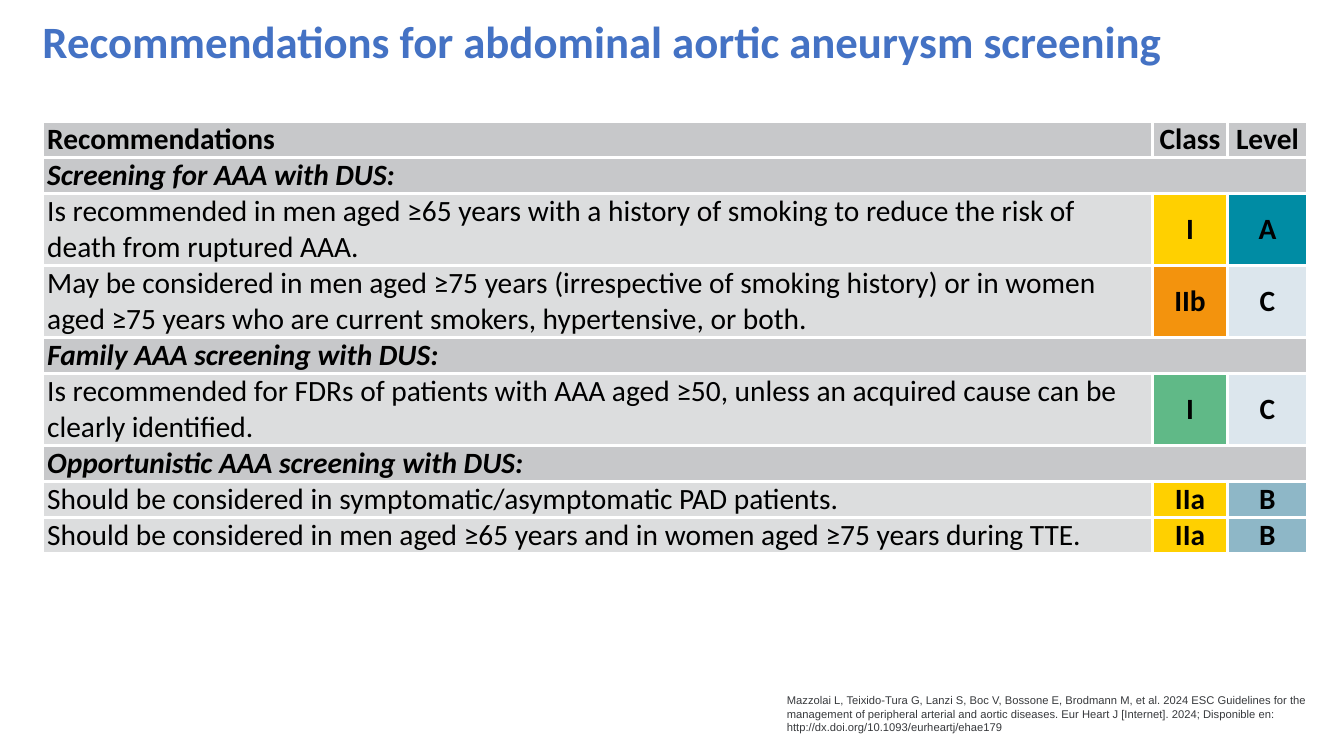
from dataclasses import dataclass

from lxml import etree
from pptx import Presentation
from pptx.dml.color import RGBColor
from pptx.enum import text as t
from pptx.oxml.ns import qn
from pptx.util import Cm, Pt


@dataclass(frozen=True)
class Theme:
    font: str = "Calibri"
    citation_font: str = "Arial"
    title_size: float = 32
    table_size: float = 21
    citation_size: float = 8
    title: str = "4472C4"
    ink: str = "000000"
    citation: str = "37393C"
    white: str = "FFFFFF"
    heading: str = "C7C8CA"
    body: str = "DCDDDE"
    yellow: str = "FFD000"
    orange: str = "F3930D"
    green: str = "60B987"
    level_a: str = "008CA4"
    level_b: str = "8EB7C7"
    level_c: str = "DCE6ED"


THEME = Theme()
LEVEL_FILLS = {"A": THEME.level_a, "B": THEME.level_b, "C": THEME.level_c}


@dataclass(frozen=True)
class Section:
    text: str


@dataclass(frozen=True)
class Recommendation:
    text: str
    grade: str
    grade_fill: str
    level: str
    lines: int = 1


ROWS = [
    Section("Screening for AAA with DUS:"),
    Recommendation(
        "Is recommended in men aged ≥65 years with a history of smoking "
        "to reduce the risk of death from ruptured AAA.",
        "I", THEME.yellow, "A", 2),
    Recommendation(
        "May be considered in men aged ≥75 years (irrespective of smoking history) "
        "or in women aged ≥75 years who are current smokers, hypertensive, or both.",
        "IIb", THEME.orange, "C", 2),
    Section("Family AAA screening with DUS:"),
    Recommendation(
        "Is recommended for FDRs of patients with AAA aged ≥50, "
        "unless an acquired cause can be clearly identified.",
        "I", THEME.green, "C", 2),
    Section("Opportunistic AAA screening with DUS:"),
    Recommendation(
        "Should be considered in symptomatic/asymptomatic PAD patients.",
        "IIa", THEME.yellow, "B"),
    Recommendation(
        "Should be considered in men aged ≥65 years and in women aged ≥75 years during TTE.",
        "IIa", THEME.yellow, "B"),
]
HEADERS = ["Recommendations", "Class", "Level"]
COLUMN_WIDTHS = [27.98, 1.88, 2.02]
LINE_HEIGHT = 0.9
CITATION = (
    "Mazzolai L, Teixido-Tura G, Lanzi S, Boc V, Bossone E, Brodmann M, et al. "
    "2024 ESC Guidelines for the management of peripheral arterial and aortic diseases. "
    "Eur Heart J [Internet]. 2024; Disponible en: "
    "http://dx.doi.org/10.1093/eurheartj/ehae179"
)


def apply_format(target, values: dict) -> None:
    for name, value in values.items():
        setattr(target, name, value)


def format_font(font, color: str, values: dict) -> None:
    apply_format(font, values)
    font.color.rgb = RGBColor.from_string(color)


def add_borders(cell) -> None:
    properties = cell._tc.get_or_add_tcPr()
    for side in ("lnL", "lnR", "lnT", "lnB"):
        line = etree.SubElement(properties, qn(f"a:{side}"), w=str(Pt(2.25)))
        fill = etree.SubElement(line, qn("a:solidFill"))
        etree.SubElement(fill, qn("a:srgbClr"), val=THEME.white)


def fill_cell(cell, fill: str, content: str = "", centered: bool = False,
              bold: bool = True, italic: bool = False) -> None:
    apply_format(cell, {
        "margin_left": Cm(0.12), "margin_right": Cm(0.12),
        "margin_top": 0, "margin_bottom": 0,
        "vertical_anchor": t.MSO_ANCHOR.MIDDLE,
    })
    add_borders(cell)
    cell.fill.solid()
    cell.fill.fore_color.rgb = RGBColor.from_string(fill)
    paragraph = cell.text_frame.paragraphs[0]
    paragraph.alignment = t.PP_ALIGN.CENTER if centered else t.PP_ALIGN.LEFT
    run = paragraph.add_run()
    run.text = content
    format_font(run.font, THEME.ink, {
        "name": THEME.font, "size": Pt(THEME.table_size),
        "bold": bold, "italic": italic,
    })


def add_title(slide) -> None:
    title = slide.shapes.title
    apply_format(title, {"left": Cm(1.07), "top": Cm(0.41),
                         "width": Cm(29.34), "height": Cm(1.42)})
    title.fill.solid()
    title.fill.fore_color.rgb = RGBColor.from_string(THEME.white)
    frame = title.text_frame
    frame.text = "Recommendations for abdominal aortic aneurysm screening"
    apply_format(frame, {
        "margin_left": 0, "margin_right": 0, "margin_top": 0, "margin_bottom": 0,
        "vertical_anchor": t.MSO_ANCHOR.MIDDLE, "word_wrap": True,
        "auto_size": t.MSO_AUTO_SIZE.NONE,
    })
    paragraph = frame.paragraphs[0]
    apply_format(paragraph, {"alignment": t.PP_ALIGN.JUSTIFY, "line_spacing": Pt(33.3),
                             "space_before": Pt(0)})
    format_font(paragraph.runs[0].font, THEME.title, {
        "name": THEME.font, "size": Pt(THEME.title_size), "bold": True})


def add_recommendations(slide) -> None:
    line_counts = [1] + [getattr(row, "lines", 1) for row in ROWS]
    table = slide.shapes.add_table(
        len(line_counts), len(HEADERS), Cm(1.07), Cm(3.07),
        Cm(sum(COLUMN_WIDTHS)), Cm(LINE_HEIGHT * sum(line_counts))).table
    apply_format(table, {"first_row": False, "horz_banding": False})
    for column, width in zip(table.columns, COLUMN_WIDTHS):
        column.width = Cm(width)
    for table_row, lines in zip(table.rows, line_counts):
        table_row.height = Cm(LINE_HEIGHT * lines)
    for index, header in enumerate(HEADERS):
        fill_cell(table.cell(0, index), THEME.heading, header, centered=index > 0)
    for index, row in enumerate(ROWS, start=1):
        first, second, third = (table.cell(index, column) for column in range(3))
        if isinstance(row, Section):
            first.merge(third)
            fill_cell(first, THEME.heading, row.text, italic=True)
            first.vertical_anchor = t.MSO_ANCHOR.TOP
            for spanned in (second, third):
                fill_cell(spanned, THEME.heading)
        else:
            fill_cell(first, THEME.body, row.text, bold=False)
            fill_cell(second, row.grade_fill, row.grade, centered=True)
            fill_cell(third, LEVEL_FILLS[row.level], row.level, centered=True)


def add_citation(slide) -> None:
    box = slide.shapes.add_textbox(Cm(19.58), Cm(17.35), Cm(13.61), Cm(1.27))
    frame = box.text_frame
    frame.text = CITATION
    apply_format(frame, {"word_wrap": True,
                         "auto_size": t.MSO_AUTO_SIZE.SHAPE_TO_FIT_TEXT})
    format_font(frame.paragraphs[0].runs[0].font, THEME.citation, {
        "name": THEME.citation_font, "size": Pt(THEME.citation_size)})


def main() -> None:
    presentation = Presentation()
    apply_format(presentation, {"slide_width": Cm(33.87), "slide_height": Cm(19.05)})
    slide = presentation.slides.add_slide(presentation.slide_layouts[5])
    add_title(slide)
    add_recommendations(slide)
    add_citation(slide)
    presentation.save("out.pptx")


if __name__ == "__main__":
    main()
